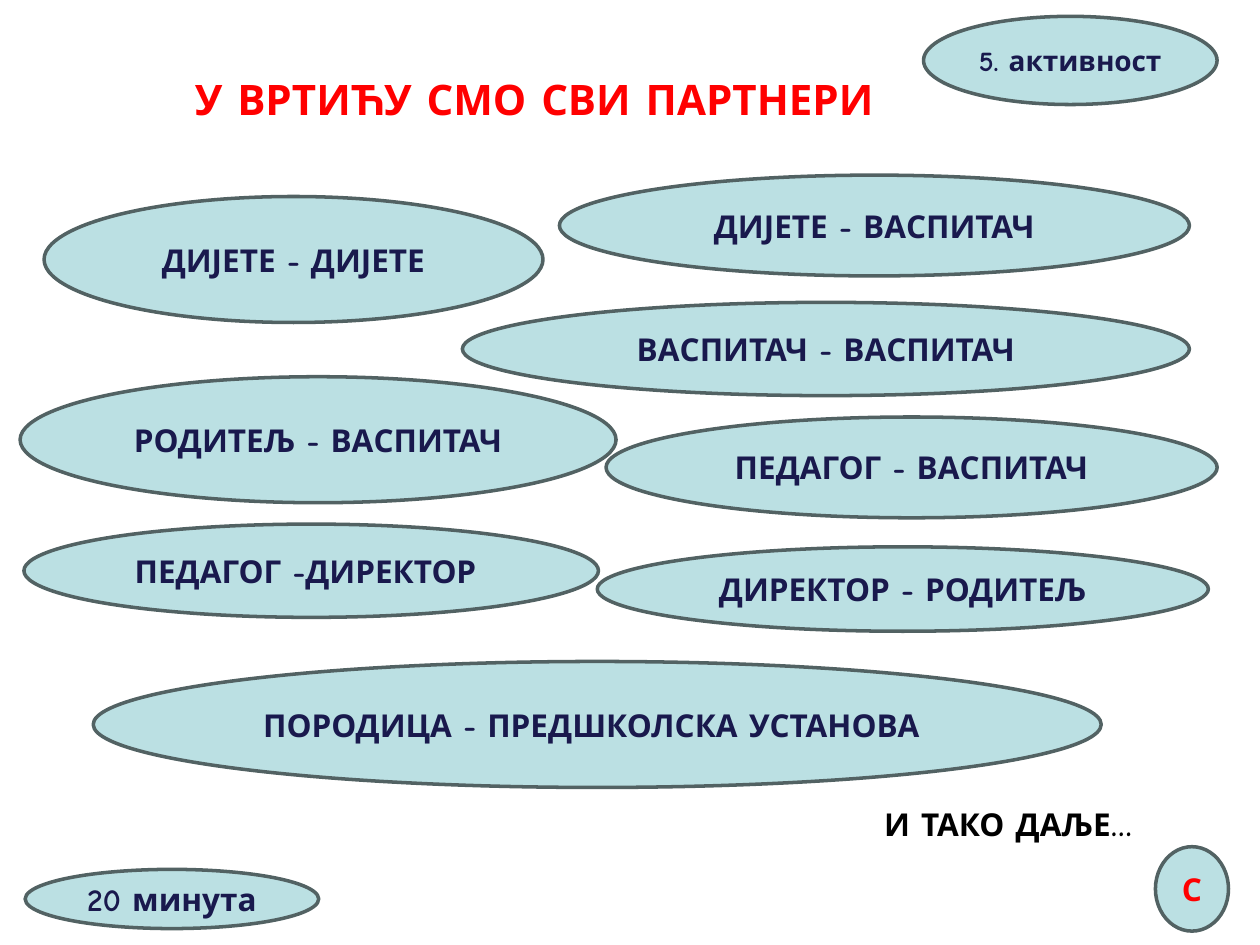
from dataclasses import dataclass

import pptx
import pptx.dml.color
import pptx.enum.shapes
import pptx.enum.text
import pptx.util

Inches = pptx.util.Inches
Pt = pptx.util.Pt
CENTER = pptx.enum.text.PP_ALIGN.CENTER
MIDDLE = pptx.enum.text.MSO_ANCHOR.MIDDLE

FONT = "Comic Neue"
COLORS = {
    "fill": "BBE0E3",
    "line": "526263",
    "navy": "19194D",
    "red": "FF0000",
    "black": "000000",
}


@dataclass
class Bubble:
    text: str
    left: float
    top: float
    width: float
    height: float
    size: int = 18
    color: str = "navy"


BUBBLES = [
    Bubble("20 минута", 0.2, 6.9, 2.33, 0.47),
    Bubble("ДИЈЕТЕ - ДИЈЕТЕ", 0.35, 1.56, 3.96, 1),
    Bubble("ДИЈЕТЕ - ВАСПИТАЧ", 4.44, 1.39, 5, 0.8),
    Bubble("ПОРОДИЦА - ПРЕДШКОЛСКА УСТАНОВА ", 0.74, 5.25, 8, 1),
    Bubble("ПЕДАГОГ - ВАСПИТАЧ", 4.81, 3.31, 4.85, 0.8),
    Bubble("ПЕДАГОГ -ДИРЕКТОР ", 0.19, 4.16, 4.56, 0.74),
    Bubble("ДИРЕКТОР - РОДИТЕЉ", 4.74, 4.34, 4.85, 0.67),
    Bubble("РОДИТЕЉ - ВАСПИТАЧ", 0.16, 2.99, 4.73, 1),
    Bubble("С", 9.17, 6.72, 0.58, 0.67, color="red"),
    Bubble("ВАСПИТАЧ - ВАСПИТАЧ", 3.67, 2.4, 5.77, 0.74),
    Bubble("5. активност", 7.33, 0.13, 2.33, 0.7, size=16),
]


def rgb(name: str) -> pptx.dml.color.RGBColor:
    return pptx.dml.color.RGBColor.from_string(COLORS[name])


def style_font(font, size: int, color: str, name: str = FONT, bold: bool = True) -> None:
    font.name = name
    font.size = Pt(size)
    font.bold = bold
    font.color.rgb = rgb(color)


def add_title(s) -> None:
    sp = s.shapes.title
    sp.left, sp.top, sp.width, sp.height = map(Inches, (1.17, 0.13, 6, 1.17))
    tf = sp.text_frame
    tf.word_wrap = True
    tf.auto_size = pptx.enum.text.MSO_AUTO_SIZE.NONE
    tf.vertical_anchor = MIDDLE
    p = tf.paragraphs[0]
    p.alignment = CENTER
    r = p.add_run()
    r.text = " "
    style_font(r.font, 36, "red", "Arial", False)
    r = p.add_run()
    r.text = "У ВРТИЋУ СМО СВИ ПАРТНЕРИ"
    style_font(r.font, 24, "red")


def add_bubble(s, b: Bubble) -> None:
    sp = s.shapes.add_shape(
        pptx.enum.shapes.MSO_SHAPE.OVAL,
        Inches(b.left), Inches(b.top), Inches(b.width), Inches(b.height),
    )
    sp.shadow.inherit = False
    sp.fill.solid()
    sp.fill.fore_color.rgb = rgb("fill")
    sp.line.color.rgb = rgb("line")
    sp.line.width = Pt(2)
    tf = sp.text_frame
    tf.word_wrap = True
    tf.vertical_anchor = MIDDLE
    p = tf.paragraphs[0]
    p.text = b.text
    p.alignment = CENTER
    style_font(p.font, b.size, b.color)


def add_closing(s) -> None:
    sp = s.shapes.add_textbox(Inches(6), Inches(6.34), Inches(4), Inches(0.4))
    tf = sp.text_frame
    tf.word_wrap = True
    tf.auto_size = pptx.enum.text.MSO_AUTO_SIZE.SHAPE_TO_FIT_TEXT
    p = tf.paragraphs[0]
    p.text = "И ТАКО ДАЉЕ…"
    p.alignment = CENTER
    style_font(p.font, 18, "black")


def main() -> None:
    prs = pptx.Presentation()
    prs.slide_width, prs.slide_height = Inches(10), Inches(7.5)
    s = prs.slides.add_slide(prs.slide_layouts[5])
    add_title(s)
    for b in BUBBLES:
        add_bubble(s, b)
    add_closing(s)
    prs.save("out.pptx")


if __name__ == "__main__":
    main()
